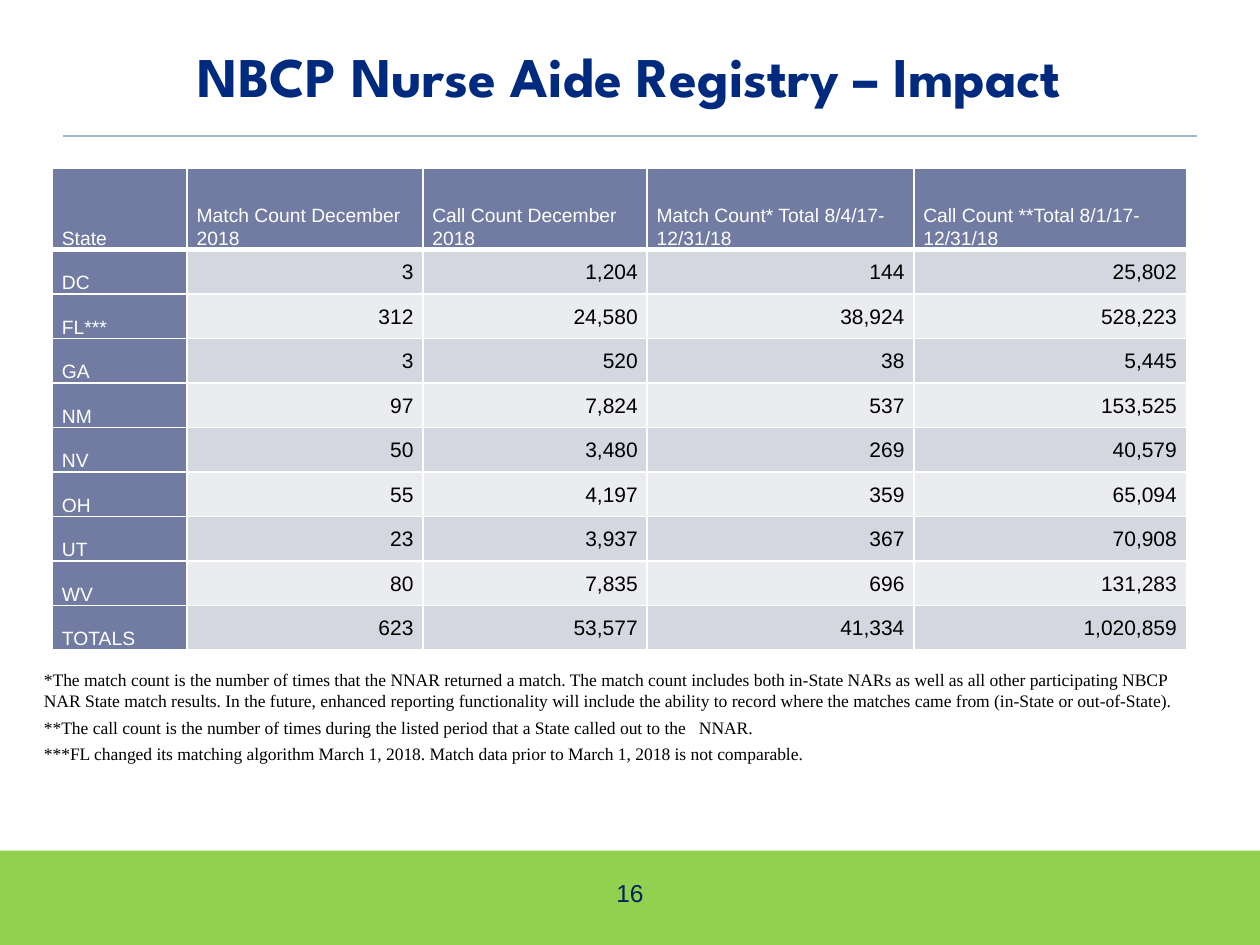
from lxml import etree
from pptx import Presentation
from pptx.dml.color import RGBColor
from pptx.enum.shapes import MSO_CONNECTOR, MSO_SHAPE
from pptx.enum.text import MSO_ANCHOR, MSO_AUTO_SIZE, PP_ALIGN
from pptx.oxml.ns import qn
from pptx.util import Pt

RECT = MSO_SHAPE.RECTANGLE
STRAIGHT = MSO_CONNECTOR.STRAIGHT
TOP, MIDDLE, BOTTOM = MSO_ANCHOR.TOP, MSO_ANCHOR.MIDDLE, MSO_ANCHOR.BOTTOM
LEFT, CENTER, RIGHT = PP_ALIGN.LEFT, PP_ALIGN.CENTER, PP_ALIGN.RIGHT

TITLE = "NBCP Nurse Aide Registry – Impact"
COUNTS = [
    ["State", "Match Count December 2018", "Call Count December 2018",
     "Match Count* Total 8/4/17-12/31/18", "Call Count **Total 8/1/17-12/31/18"],
    ["DC", "3", "1,204", "144", "25,802"],
    ["FL***", "312", "24,580", "38,924", "528,223"],
    ["GA", "3", "520", "38", "5,445"],
    ["NM", "97", "7,824", "537", "153,525"],
    ["NV", "50", "3,480", "269", "40,579"],
    ["OH", "55", "4,197", "359", "65,094"],
    ["UT", "23", "3,937", "367", "70,908"],
    ["WV", "80", "7,835", "696", "131,283"],
    ["TOTALS", "623", "53,577", "41,334", "1,020,859"],
]
COL_WIDTHS = [77, 134.7, 128.2, 152.4, 155.7]
HEADER_HEIGHT, ROW_HEIGHT = 46.5, 25.45
NOTES = [
    "*The match count is the number of times that the NNAR returned a match. "
    "The match count includes both in-State NARs as well as all other "
    "participating NBCP NAR State match results. In the future, enhanced "
    "reporting functionality will include the ability to record where the "
    "matches came from (in-State or out-of-State).",
    "**The call count is the number of times during the listed period that "
    "a State called out to the   NNAR.",
    "***FL changed its matching algorithm March 1, 2018. Match data prior to "
    "March 1, 2018 is not comparable.",
]


def color(value):
    return RGBColor.from_string(value)


def set_borders(cell, bottom):
    """Draw white cell edges, 1 pt wide except for the given bottom width."""
    tcPr = cell._tc.get_or_add_tcPr()
    widths = {"a:lnL": 1, "a:lnR": 1, "a:lnT": 1, "a:lnB": bottom}
    for i, (tag, width) in enumerate(widths.items()):
        ln = etree.Element(qn(tag), w=str(Pt(width)))
        fill = etree.SubElement(ln, qn("a:solidFill"))
        etree.SubElement(fill, qn("a:srgbClr"), val="FFFFFF")
        tcPr.insert(i, ln)


class Deck:
    """Holds the style and the current slide."""
    HEADING, BODY, NOTE = "League Spartan", "Arial", "Times New Roman"
    NAVY, NUMBER, BLACK, WHITE = "002A7E", "002060", "000000", "FFFFFF"
    GREEN, RULE, HEAD = "92D050", "9FB8CD", "727CA3"
    BANDS = ["EBECF0", "D5D7E0"]

    def __init__(self, prs):
        self.s = prs.slides.add_slide(prs.slide_layouts[5])

    def format(self, tf, font, size, rgb, align=LEFT, after=0, spacing=None,
               bold=False):
        for p in tf.paragraphs:
            p.alignment = align
            p.space_after = Pt(after)
            if spacing:
                p.line_spacing = spacing
            for r in p.runs:
                r.font.name, r.font.size, r.font.bold = font, Pt(size), bold
                r.font.color.rgb = color(rgb)

    def title(self, text, x, y, w, h):
        sp = self.s.shapes.title
        sp.left, sp.top, sp.width, sp.height = Pt(x), Pt(y), Pt(w), Pt(h)
        tf = sp.text_frame
        tf.text = text
        tf.vertical_anchor = BOTTOM
        tf.auto_size = MSO_AUTO_SIZE.NONE
        self.format(tf, self.HEADING, 32, self.NAVY, CENTER, after=6, bold=True)

    def band(self, x, y, w, h):
        sp = self.s.shapes.add_shape(RECT, Pt(x), Pt(y), Pt(w), Pt(h))
        sp.shadow.inherit = False
        sp.fill.solid()
        sp.fill.fore_color.rgb = color(self.GREEN)
        sp.line.fill.background()

    def rule(self, x1, x2, y):
        line = self.s.shapes.add_connector(STRAIGHT, Pt(x1), Pt(y), Pt(x2), Pt(y))
        line.line.color.rgb = color(self.RULE)
        line.line.width = Pt(1.25)
        etree.SubElement(line._element.spPr, qn("a:effectLst"))

    def text(self, lines, x, y, w, h, font, size, rgb, align=LEFT, after=0):
        tf = self.s.shapes.add_textbox(Pt(x), Pt(y), Pt(w), Pt(h)).text_frame
        tf.word_wrap = True
        tf.vertical_anchor = TOP
        tf.text = "\n".join(lines)
        self.format(tf, font, size, rgb, align, after)

    def table(self, rows, widths, x, y):
        heights = [HEADER_HEIGHT] + [ROW_HEIGHT] * (len(rows) - 1)
        table = self.s.shapes.add_table(
            len(rows), len(widths), Pt(x), Pt(y),
            Pt(sum(widths)), Pt(sum(heights))).table
        table.first_row = table.horz_banding = False
        for column, width in zip(table.columns, widths):
            column.width = Pt(width)
        for i, (row, height) in enumerate(zip(rows, heights)):
            table.rows[i].height = Pt(height)
            for j, value in enumerate(row):
                self.cell(table.cell(i, j), value, i, j)

    def cell(self, cell, value, i, j):
        is_head = i == 0 or j == 0
        cell.margin_left = cell.margin_right = Pt(5.4)
        cell.margin_top = cell.margin_bottom = 0
        cell.vertical_anchor = BOTTOM if is_head else MIDDLE
        cell.fill.solid()
        cell.fill.fore_color.rgb = color(self.HEAD if is_head else self.BANDS[i % 2])
        set_borders(cell, 3 if i == 0 else 1)
        cell.text_frame.text = value
        size, rgb, align = (11, self.WHITE, LEFT) if is_head else (12, self.BLACK, RIGHT)
        self.format(cell.text_frame, self.BODY, size, rgb, align, spacing=1.07)


def main():
    prs = Presentation()
    prs.slide_width, prs.slide_height = Pt(720), Pt(540)
    deck = Deck(prs)
    deck.band(0, 486, 720, 54)
    deck.rule(36, 684, 77.75)
    deck.title(TITLE, 0, 12, 720, 54)
    deck.table(COUNTS, COL_WIDTHS, 30, 96)
    deck.text(["16"], 342, 498, 36, 29, deck.BODY, 14, deck.NUMBER, CENTER)
    deck.text(NOTES, 18, 379, 660, 74, deck.NOTE, 10, deck.BLACK, after=3)
    prs.save("out.pptx")


if __name__ == "__main__":
    main()
